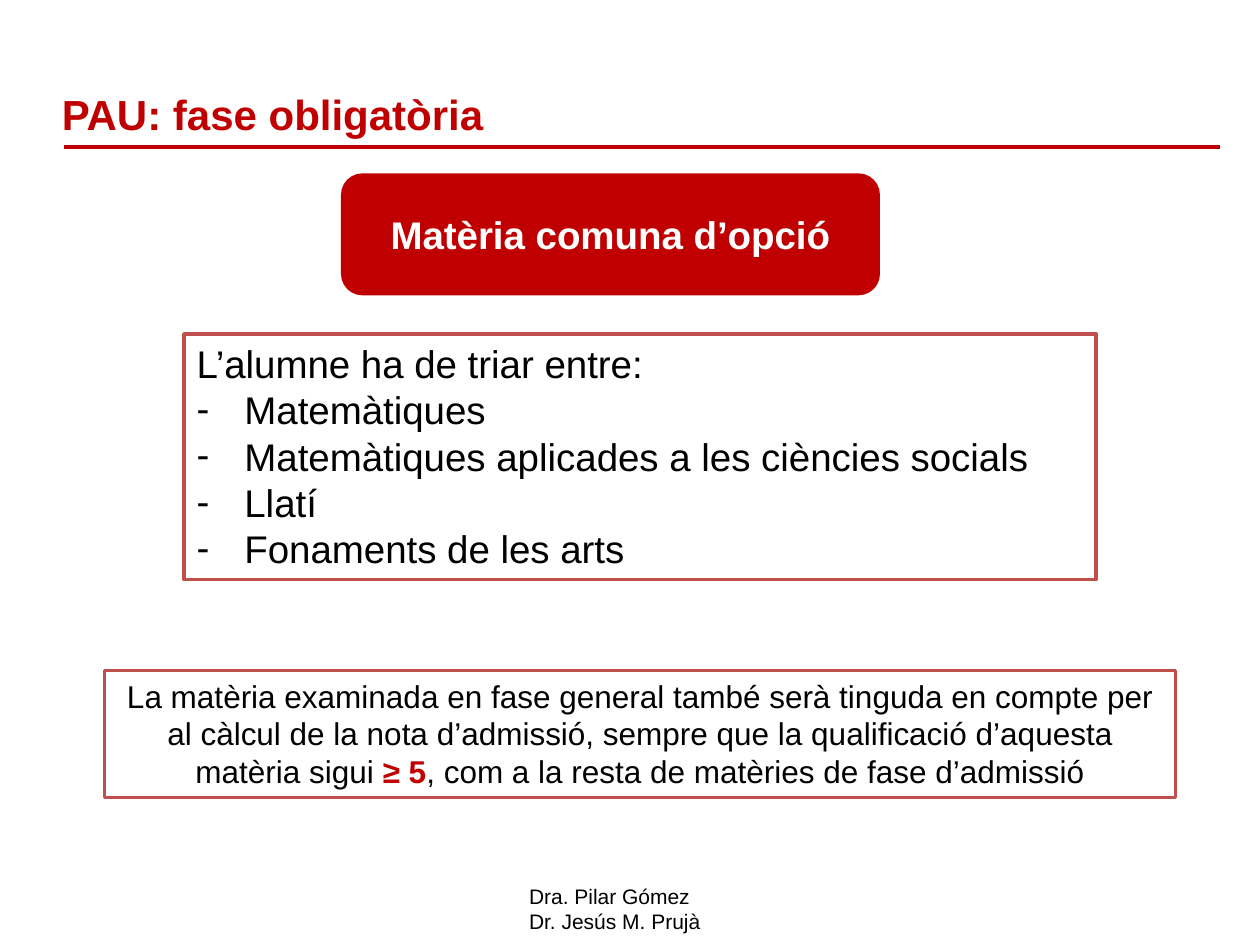
from lxml import etree
from pptx import Presentation
from pptx.dml.color import RGBColor
from pptx.enum.shapes import MSO_CONNECTOR, MSO_SHAPE
from pptx.enum.text import MSO_ANCHOR, MSO_AUTO_SIZE, PP_ALIGN
from pptx.oxml.ns import qn
from pptx.util import Inches, Pt

RED = RGBColor(0xC0, 0x00, 0x00)
BORDER = RGBColor(0xC0, 0x50, 0x4D)
BLACK = RGBColor(0x00, 0x00, 0x00)
WHITE = RGBColor(0xFF, 0xFF, 0xFF)


def add_text(p, text, size, color=BLACK, bold=False):
    r = p.add_run()
    r.text = text
    r.font.color.rgb = color
    formats = {"name": "Arial", "size": Pt(size), "bold": bold}
    for name, value in formats.items():
        setattr(r.font, name, value)


def set_box(sp, box, fill=None, line=None, anchor=MSO_ANCHOR.TOP):
    """Place a shape and set its fill, outline and text frame."""
    for name, value in zip(("left", "top", "width", "height"), box):
        setattr(sp, name, Inches(value))
    if fill is not None:
        sp.shadow.inherit = False
        sp.fill.solid()
        sp.fill.fore_color.rgb = fill
        sp.line.color.rgb = line
        sp.line.width = Pt(2)
    tf = sp.text_frame
    formats = {"word_wrap": True, "auto_size": MSO_AUTO_SIZE.NONE,
               "vertical_anchor": anchor}
    for name, value in formats.items():
        setattr(tf, name, value)
    return tf


prs = Presentation()
prs.slide_width, prs.slide_height = Inches(10), Inches(7.5)
s = prs.slides.add_slide(prs.slide_layouts[1])

# Title and its rule
tf = set_box(s.shapes.title, (0.39, 0.63, 9.37, 0.55), anchor=MSO_ANCHOR.MIDDLE)
p = tf.paragraphs[0]
p.alignment = PP_ALIGN.LEFT
add_text(p, "PAU: fase obligatòria", 24, RED, True)

rule = s.shapes.add_connector(MSO_CONNECTOR.STRAIGHT, Inches(0.51), Inches(1.17),
                              Inches(9.68), Inches(1.17))
rule.line.color.rgb = RED
rule.line.width = Pt(2.25)
etree.SubElement(rule.line._get_or_add_ln().getparent(), qn("a:effectLst"))

# Heading box
sp = s.shapes.add_shape(MSO_SHAPE.ROUNDED_RECTANGLE, 0, 0, 0, 0)
tf = set_box(sp, (2.72, 1.39, 4.25, 0.94), RED, RED, MSO_ANCHOR.MIDDLE)
p = tf.paragraphs[0]
p.alignment = PP_ALIGN.CENTER
add_text(p, "Matèria comuna d’opció", 22, WHITE, True)

# List of subjects
subjects = ["Matemàtiques", "Matemàtiques aplicades a les ciències socials",
            "Llatí", "Fonaments de les arts"]
tf = set_box(s.placeholders[1], (1.46, 2.65, 7.24, 1.95), WHITE, BORDER)
for i, text in enumerate(["L’alumne ha de triar entre:"] + subjects):
    p = tf.add_paragraph() if i else tf.paragraphs[0]
    p.space_before = Pt(0)
    pPr = p._p.get_or_add_pPr()
    indent = Inches(0.38) if i else 0
    pPr.set("marL", str(indent))
    pPr.set("indent", str(-indent))
    if i:
        etree.SubElement(pPr, qn("a:buFontTx"))
        etree.SubElement(pPr, qn("a:buChar"), char="-")
    else:
        etree.SubElement(pPr, qn("a:buNone"))
    add_text(p, text, 22)

# Note on the admission mark
sp = s.shapes.add_shape(MSO_SHAPE.RECTANGLE, 0, 0, 0, 0)
tf = set_box(sp, (0.83, 5.32, 8.5, 1.01), WHITE, BORDER)
p = tf.paragraphs[0]
p.alignment = PP_ALIGN.CENTER
add_text(p, "La matèria examinada en fase general també serà tinguda en compte per "
            "al càlcul de la nota d’admissió, sempre que la qualificació d’aquesta "
            "matèria sigui ", 18)
add_text(p, "≥ 5", 18, RED, True)
add_text(p, ", com a la resta de matèries de fase d’admissió", 18)

# Authors
tf = set_box(s.shapes.add_textbox(0, 0, 0, 0), (4.1, 6.96, 1.58, 0.5))
tf.word_wrap = False
add_text(tf.paragraphs[0], "Dra. Pilar Gómez", 12)
add_text(tf.add_paragraph(), "Dr. Jesús M. Prujà", 12)

prs.save("out.pptx")
